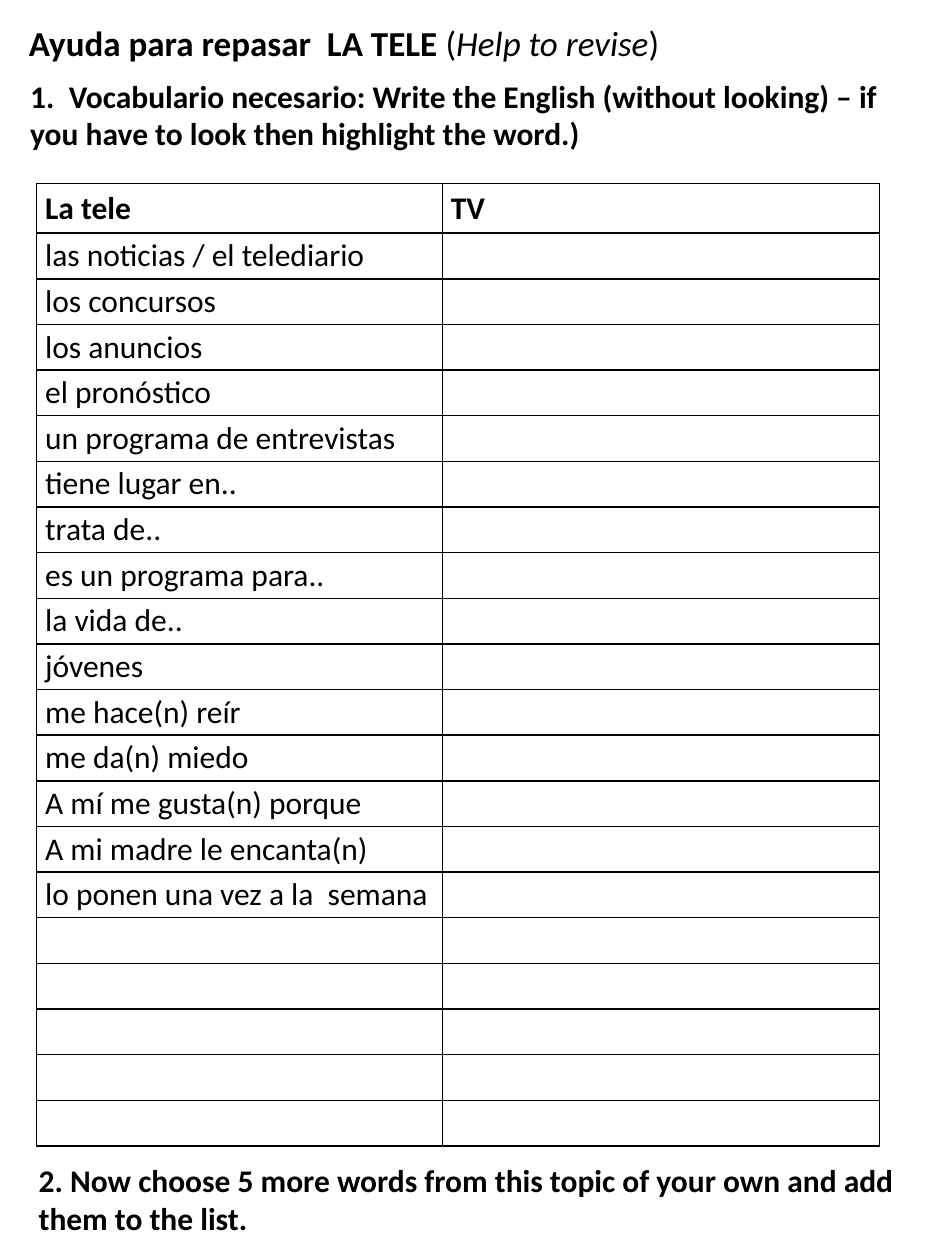
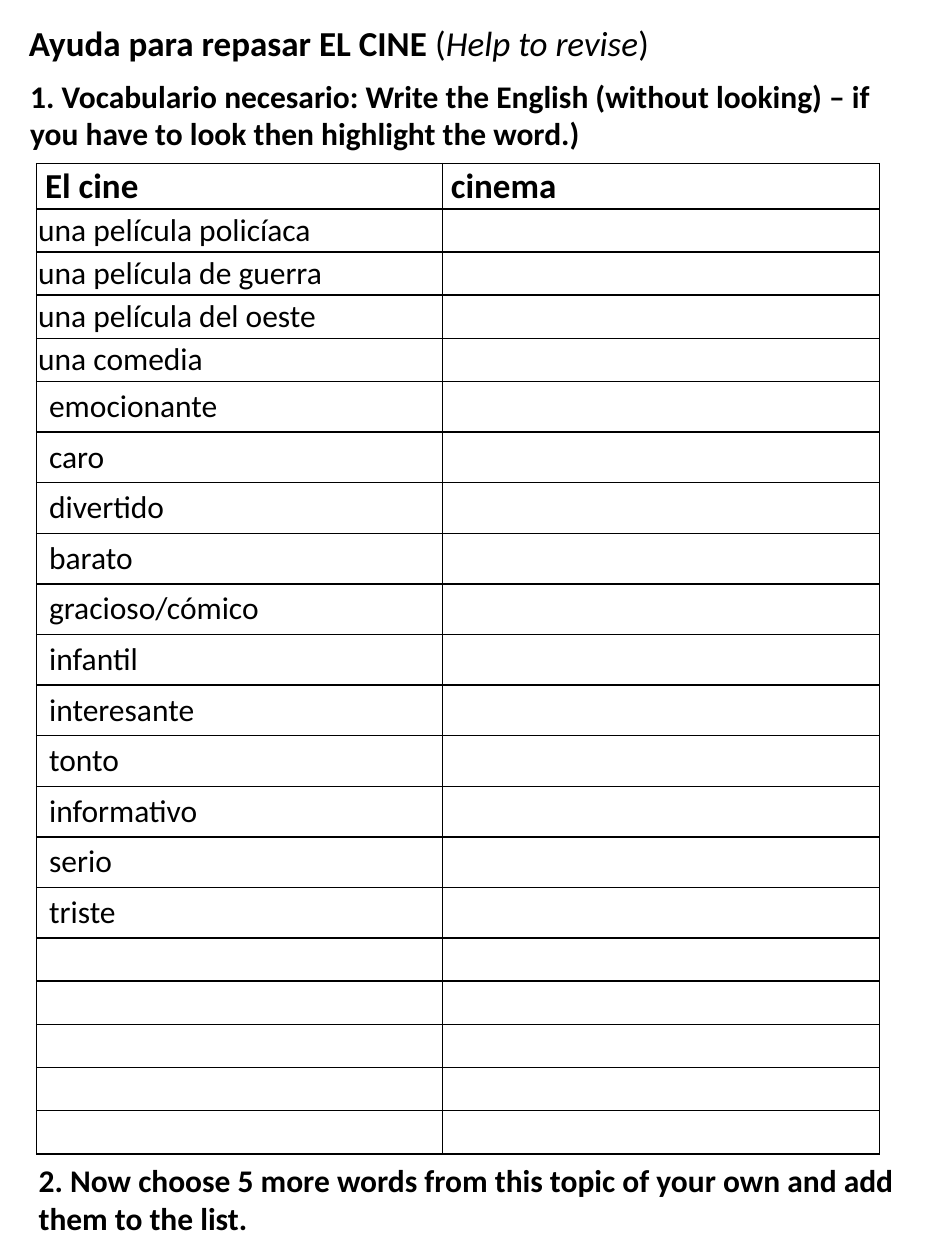
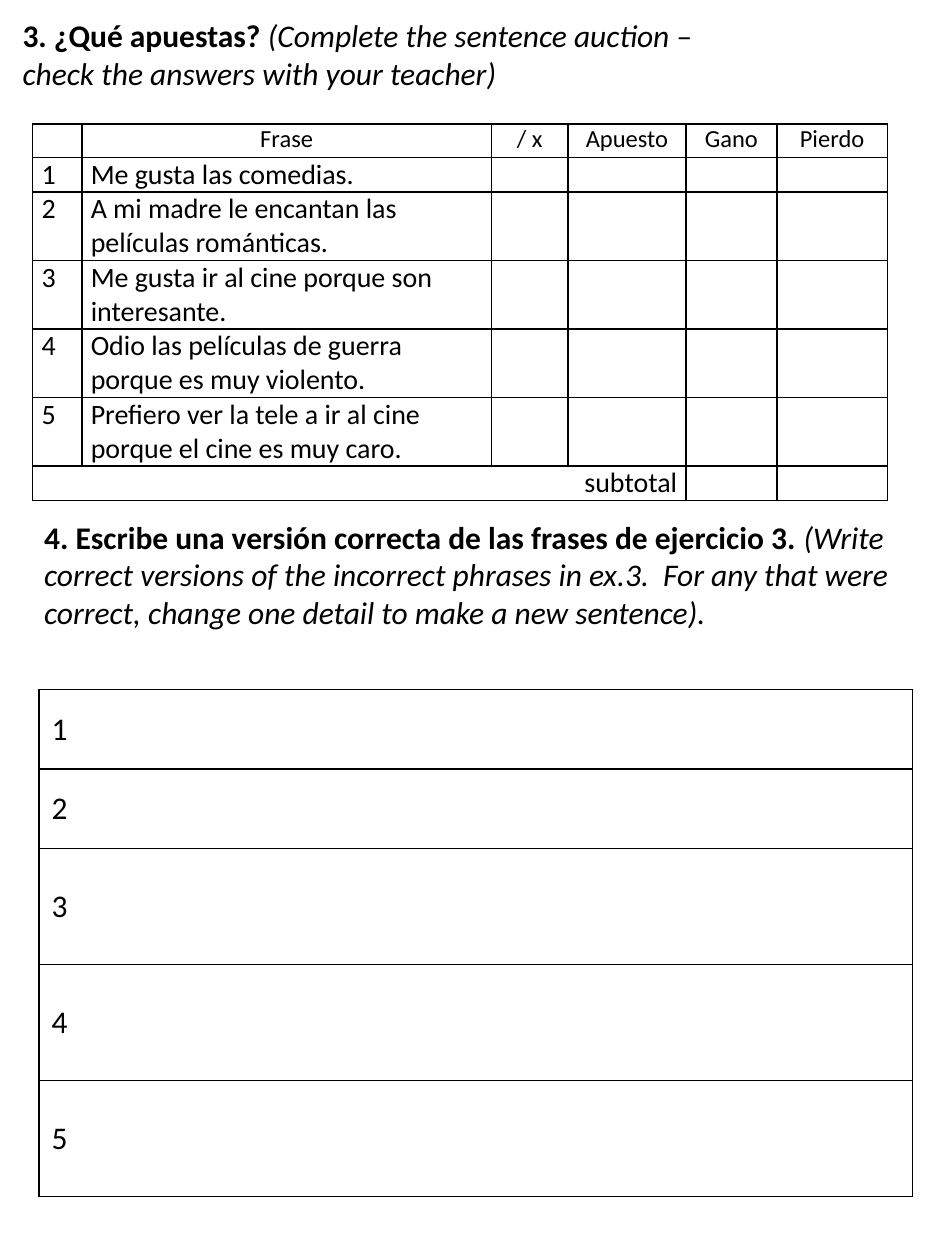
from lxml import etree
from pptx import Presentation
from pptx.dml.color import RGBColor
from pptx.enum.text import MSO_ANCHOR, MSO_AUTO_SIZE, PP_ALIGN
from pptx.oxml.ns import qn
from pptx.util import Cm, Pt

TOP, MIDDLE = MSO_ANCHOR.TOP, MSO_ANCHOR.MIDDLE
LEFT, CENTER, RIGHT = PP_ALIGN.LEFT, PP_ALIGN.CENTER, PP_ALIGN.RIGHT
NO_FIT = MSO_AUTO_SIZE.NONE
COLORS = {"ink": "000000", "paper": "FFFFFF"}
FONT = "Calibri"
PLAIN, BOLD, ITALIC = {}, {"bold": True}, {"italic": True}
BREAK = "\n"
SPARE_ROWS = 5

HELP = [("(", PLAIN), ("Help to revise", ITALIC), (")", PLAIN)]
TASK_1 = ("Vocabulario necesario: Write the English (without looking) – if "
          "you have to look then highlight the word.)")
TASK_2 = ("2. Now choose 5 more words from this topic of your own and add "
          "them to the list.")
TV_WORDS = [
    "las noticias / el telediario", "los concursos", "los anuncios",
    "el pronóstico", "un programa de entrevistas", "tiene lugar en..",
    "trata de..", "es un programa para..", "la vida de..", "jóvenes",
    "me hace(n) reír", "me da(n) miedo", "A mí me gusta(n) porque",
    "A mi madre le encanta(n)", "lo ponen una vez a la  semana"]
FILMS = ["una película policíaca", "una película de guerra",
         "una película del oeste", "una comedia"]
ADJECTIVES = ["emocionante", "caro", "divertido", "barato", "gracioso/cómico",
              "infantil", "interesante", "tonto", "informativo", "serio", "triste"]
AUCTION_HEAD = ["", "Frase", "/ x", "Apuesto", "Gano", "Pierdo"]
PHRASES = [
    "Me gusta las comedias.",
    "A mi madre le encantan las películas románticas.",
    "Me gusta ir al cine porque son interesante.",
    "Odio las películas de guerra porque es muy violento.",
    "Prefiero ver la tele a ir al cine porque el cine es muy caro."]


def set_all(obj, values):
    """Set each named attribute of an object."""
    for name, value in values.items():
        setattr(obj, name, value)


def write(p, runs, size, align=LEFT):
    """Fill a paragraph with (text, style) runs of one size."""
    p.alignment = align
    for text, style in runs:
        if text == BREAK:
            p.add_line_break()
            etree.SubElement(p._p[-1], qn("a:rPr"), sz=str(size * 100))
            continue
        r = p.add_run()
        r.text = text
        set_all(r.font, {"name": FONT, "size": Pt(size), "bold": False, **style})
        r.font.color.rgb = RGBColor.from_string(COLORS["ink"])


def place_text(sp, box, runs, size):
    """Move a text shape to a box and write one paragraph in it."""
    set_all(sp, dict(zip(("left", "top", "width", "height"), map(Cm, box))))
    tf = sp.text_frame
    set_all(tf, {"word_wrap": True, "auto_size": NO_FIT, "vertical_anchor": TOP})
    write(tf.paragraphs[0], runs, size)


def add_text(s, box, runs, size=18):
    """Add a text box."""
    place_text(s.shapes.add_textbox(0, 0, 0, 0), box, runs, size)


def add_borders(cell):
    """Draw a thin line on the four sides of a cell."""
    tc_pr = cell._tc.get_or_add_tcPr()
    for i, side in enumerate(("lnL", "lnR", "lnT", "lnB")):
        ln = etree.Element(qn(f"a:{side}"), w=str(Pt(1)))
        fill = etree.SubElement(ln, qn("a:solidFill"))
        etree.SubElement(fill, qn("a:srgbClr"), val=COLORS["ink"])
        tc_pr.insert(i, ln)


def fill_cell(cell, text, size=18, style=PLAIN, align=LEFT, anchor=MIDDLE, inset=0.17):
    """Format a cell and write its text."""
    set_all(cell, {"margin_left": Cm(inset), "margin_right": Cm(0.03),
                   "margin_top": 0, "margin_bottom": 0, "vertical_anchor": anchor})
    cell.fill.background()
    add_borders(cell)
    p = cell.text_frame.paragraphs[0]
    if text:
        write(p, [(text, style)], size, align)
    else:
        etree.SubElement(p._p, qn("a:endParaRPr"), sz=str(size * 100))


def add_grid(s, left, top, widths, heights):
    """Add an unstyled table with the given columns and rows."""
    tbl = s.shapes.add_table(len(heights), len(widths), Cm(left), Cm(top),
                             Cm(sum(widths)), Cm(sum(heights))).table
    set_all(tbl, {"first_row": False, "horz_banding": False})
    for col, width in zip(tbl.columns, widths):
        col.width = Cm(width)
    for row, height in zip(tbl.rows, heights):
        row.height = Cm(height)
    return tbl


def add_slide(prs, box, runs, size):
    """Add a slide with its title."""
    s = prs.slides.add_slide(prs.slide_layouts[5])
    s.background.fill.solid()
    s.background.fill.fore_color.rgb = RGBColor.from_string(COLORS["paper"])
    place_text(s.shapes.title, box, runs, size)
    return s


def vocabulary_slide(prs, topic, number, top, head, head_size, head_height, groups):
    """Build a word list; groups hold words, row height and left inset."""
    s = add_slide(prs, (0.33, 0.3, 17.8, 1.12),
                  [(f"Ayuda para repasar {topic} ", BOLD)] + HELP, 20)
    add_text(s, (0.36, 1.42, 17.78, 1.8), [(number + TASK_1, BOLD)])
    rows = [(word, height, inset) for words, height, inset in groups for word in words]
    tbl = add_grid(s, 0.74, top, [8.18, 8.81], [head_height] + [row[1] for row in rows])
    for c, text in enumerate(head):
        fill_cell(tbl.cell(0, c), text, head_size, BOLD)
    for i, (word, _, inset) in enumerate(rows, 1):
        fill_cell(tbl.cell(i, 0), word, inset=inset)
        fill_cell(tbl.cell(i, 1), "")
    add_text(s, (0.53, 23.29, 17.78, 1.8), [(TASK_2, BOLD)])


def auction_table(s, left, top):
    """Add the sentence auction with its subtotal row."""
    line = 0.68
    tbl = add_grid(s, left, top, [0.99, 8.26, 1.54, 2.38, 1.83, 2.23],
                   [line] * 2 + [2 * line] * 4 + [line])
    rows = [AUCTION_HEAD]
    rows += [[str(n), phrase] + [""] * 4 for n, phrase in enumerate(PHRASES, 1)]
    rows += [["subtotal"] + [""] * 5]
    last = len(rows) - 1
    aligns = {0: CENTER, last: RIGHT}
    for i, row in enumerate(rows):
        for c, text in enumerate(row):
            fill_cell(tbl.cell(i, c), text, 16 if i else 14, anchor=TOP,
                      align=aligns.get(i, LEFT), inset=0.18)
            tbl.cell(i, c).margin_right = Cm(0.18)
    tbl.cell(last, 0).merge(tbl.cell(last, 3))


def answer_table(s, left, top):
    """Add the numbered rows for the corrected sentences."""
    heights = [1.6] * 2 + [2.34] * 3
    tbl = add_grid(s, left, top, [17.6], heights)
    for i in range(len(heights)):
        fill_cell(tbl.cell(i, 0), str(i + 1), inset=0.25)


def auction_slide(prs):
    """Build the auction and correction exercises."""
    s = add_slide(prs, (0.2, 0.2, 17.78, 1.8),
                  [("3. ¿Qué apuestas? ", BOLD),
                   ("(Complete the sentence auction – ", ITALIC), (BREAK, PLAIN),
                   ("check the answers with your teacher)", ITALIC)], 18)
    auction_table(s, 0.66, 2.5)
    add_text(s, (0.64, 10.31, 17.78, 3.33),
             [("4. Escribe una versión correcta de las frases de ejercicio 3. ", BOLD),
              ("(Write correct versions of the incorrect phrases in ex.3.  For any "
               "that were correct, change one detail to make a new sentence).", ITALIC)])
    answer_table(s, 0.79, 13.9)


def main():
    """Build and save the worksheet."""
    prs = Presentation()
    set_all(prs, {"slide_width": Cm(19.05), "slide_height": Cm(25.4)})
    spare = [""] * SPARE_ROWS
    vocabulary_slide(prs, " LA TELE", "1.  ", 3.7, ("La tele", "TV"), 18, 1.0,
                     [(TV_WORDS + spare, 0.92, 0.17)])
    vocabulary_slide(prs, "EL CINE", "1. ", 3.3, ("El cine", "cinema"), 20, 0.91,
                     [(FILMS, 0.87, 0.03), (ADJECTIVES, 1.02, 0.25), (spare, 0.87, 0.03)])
    auction_slide(prs)
    prs.save("out.pptx")


if __name__ == "__main__":
    main()
